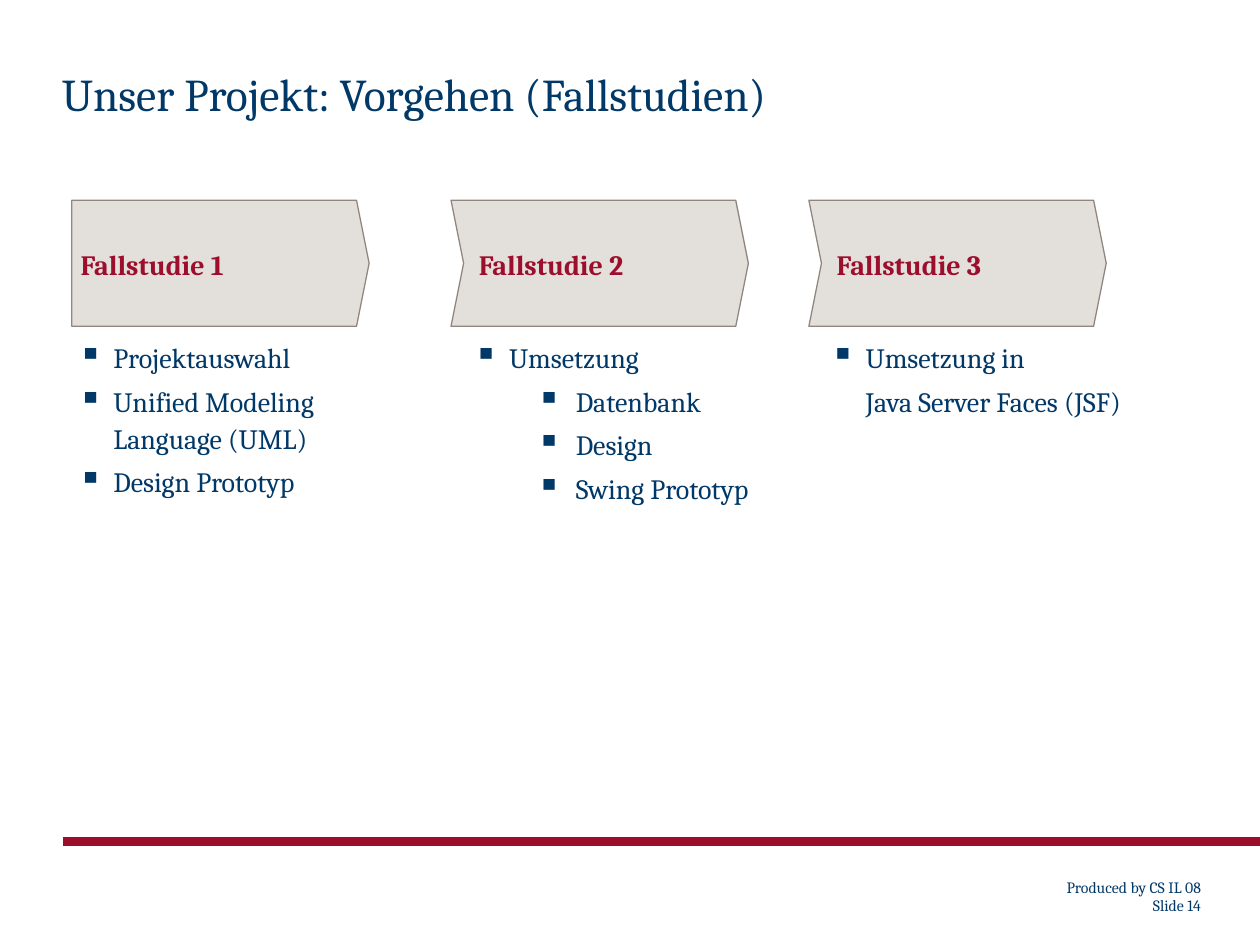
from dataclasses import dataclass

from lxml.etree import SubElement
from pptx import Presentation
from pptx.dml.color import RGBColor
from pptx.enum.shapes import MSO_CONNECTOR, MSO_SHAPE
from pptx.enum.text import MSO_ANCHOR, MSO_AUTO_SIZE, PP_ALIGN
from pptx.oxml.ns import qn
from pptx.slide import Slide
from pptx.text.text import TextFrame
from pptx.util import Inches, Pt


@dataclass(frozen=True)
class Theme:
    """Hold the colours, font and type sizes."""
    blue: str = "003868"
    red: str = "9D0E2D"
    fill: str = "E3DFDB"
    edge: str = "91867E"
    font: str = "Cambria"
    title: int = 26
    body: int = 16
    small: int = 9


@dataclass(frozen=True)
class Line:
    """Describe one line of text with its indent in inches."""
    text: str
    level: int = 0
    left: float = 0
    hang: float = 0
    mark: bool = False


@dataclass(frozen=True)
class Box:
    """Give a place in inches."""
    left: float
    top: float
    width: float
    height: float

    def sides(self) -> tuple:
        """Return the four lengths."""
        return tuple(map(Inches, (self.left, self.top, self.width, self.height)))


@dataclass(frozen=True)
class Step:
    """Describe one case study: arrow, label and list."""
    name: str
    shape: MSO_SHAPE
    left: float
    label: Box
    list: Box
    lines: tuple


THEME = Theme()


def point(text: str) -> Line:
    """Make a main bullet."""
    return Line(text, 0, 0.28, 0.28, True)


def sub(text: str) -> Line:
    """Make a nested bullet."""
    return Line(text, 1, 0.81, 0.31, True)


STEPS = (
    Step("Fallstudie 1", MSO_SHAPE.PENTAGON, 0.57,
         Box(0.64, 1.94, 2.14, 0.29), Box(0.62, 2.68, 3.04, 2.34),
         (point("Projektauswahl"), point("Unified Modeling \vLanguage (UML)"),
          point("Design Prototyp"))),
    Step("Fallstudie 2", MSO_SHAPE.CHEVRON, 3.58,
         Box(3.8, 1.94, 2.02, 0.29), Box(3.76, 2.68, 2.35, 1.7),
         (point("Umsetzung"), sub("Datenbank"), sub("Design"),
          sub("Swing Prototyp"))),
    Step("Fallstudie 3", MSO_SHAPE.CHEVRON, 6.42,
         Box(6.64, 1.94, 2.02, 0.29), Box(6.59, 2.68, 2.98, 0.65),
         (point("Umsetzung in"), Line("Java Server Faces (JSF)", left=0.28))),
)


def tint(code: str) -> RGBColor:
    """Turn a hex code into a colour."""
    return RGBColor.from_string(code)


def indent(props, line: Line) -> None:
    """Set the indent and bullet of a paragraph."""
    props.set("marL", str(Inches(line.left)))
    props.set("indent", str(-Inches(line.hang)))
    if line.mark:
        shade = SubElement(props, qn("a:buClr"))
        SubElement(shade, qn("a:srgbClr"), val=THEME.blue)
        SubElement(props, qn("a:buSzPct"), val="120000")
        SubElement(props, qn("a:buChar"), char="▪")


def write(frame: TextFrame, lines: tuple, *, size: int = THEME.body,
          color: str = THEME.blue, bold: bool = False, space=1.1,
          before: float = 0, align=PP_ALIGN.LEFT, anchor=MSO_ANCHOR.TOP,
          pad: float = 0) -> None:
    """Fill a frame with lines in one format."""
    frame.word_wrap = True
    frame.auto_size = MSO_AUTO_SIZE.NONE
    frame.vertical_anchor = anchor
    frame.margin_left = frame.margin_right = 0
    frame.margin_top = frame.margin_bottom = Inches(pad)
    for rank, line in enumerate(lines):
        para = frame.add_paragraph() if rank else frame.paragraphs[0]
        para.text = line.text
        indent(para._p.get_or_add_pPr(), line)
        para.level = line.level
        para.alignment = align
        para.line_spacing = space
        para.space_before = Pt(before if rank else 0)
        for font in (para.font, *(run.font for run in para.runs)):
            font.name = THEME.font
            font.size = Pt(size)
            font.bold = bold
            font.color.rgb = tint(color)


def place(slide: Slide, box: Box) -> TextFrame:
    """Add a text box and return its frame."""
    return slide.shapes.add_textbox(*box.sides()).text_frame


def draw(slide: Slide, step: Step) -> None:
    """Draw one case study."""
    write(place(slide, step.list), step.lines, before=3.75)
    arrow = slide.shapes.add_shape(step.shape, *Box(step.left, 1.59, 2.36, 1).sides())
    arrow.adjustments[0] = 0.1
    arrow.shadow.inherit = False
    arrow.fill.solid()
    arrow.fill.fore_color.rgb = tint(THEME.fill)
    arrow.line.color.rgb = tint(THEME.edge)
    arrow.line.width = Pt(0.75)
    write(place(slide, step.label), (Line(step.name),), color=THEME.red,
          bold=True, anchor=MSO_ANCHOR.MIDDLE)


def foot(slide: Slide) -> None:
    """Draw the red rule and the footer."""
    rule = slide.shapes.add_connector(
        MSO_CONNECTOR.STRAIGHT, *map(Inches, (0.5, 6.68, 10, 6.68)))
    rule.line.color.rgb = tint(THEME.red)
    rule.line.width = Pt(5)
    SubElement(rule._element.spPr, qn("a:effectLst"))
    write(place(slide, Box(7.61, 6.92, 1.92, 0.39)),
          (Line("Produced by CS IL 08"), Line("Slide 14")), size=THEME.small,
          space=0.94, align=PP_ALIGN.RIGHT, anchor=MSO_ANCHOR.BOTTOM, pad=0.05)


def head(slide: Slide) -> None:
    """Place and fill the title."""
    title = slide.shapes.title
    title.left, title.top, title.width, title.height = Box(0.49, 0.58, 9.01, 0.34).sides()
    write(title.text_frame, (Line("Unser Projekt: Vorgehen (Fallstudien)"),),
          size=THEME.title, space=Pt(27))


def main() -> None:
    """Build and save the slide."""
    deck = Presentation()
    deck.slide_width, deck.slide_height = Inches(10), Inches(7.5)
    slide = deck.slides.add_slide(deck.slide_layouts[5])
    foot(slide)
    head(slide)
    for step in STEPS:
        draw(slide, step)
    deck.save("out.pptx")


if __name__ == "__main__":
    main()
